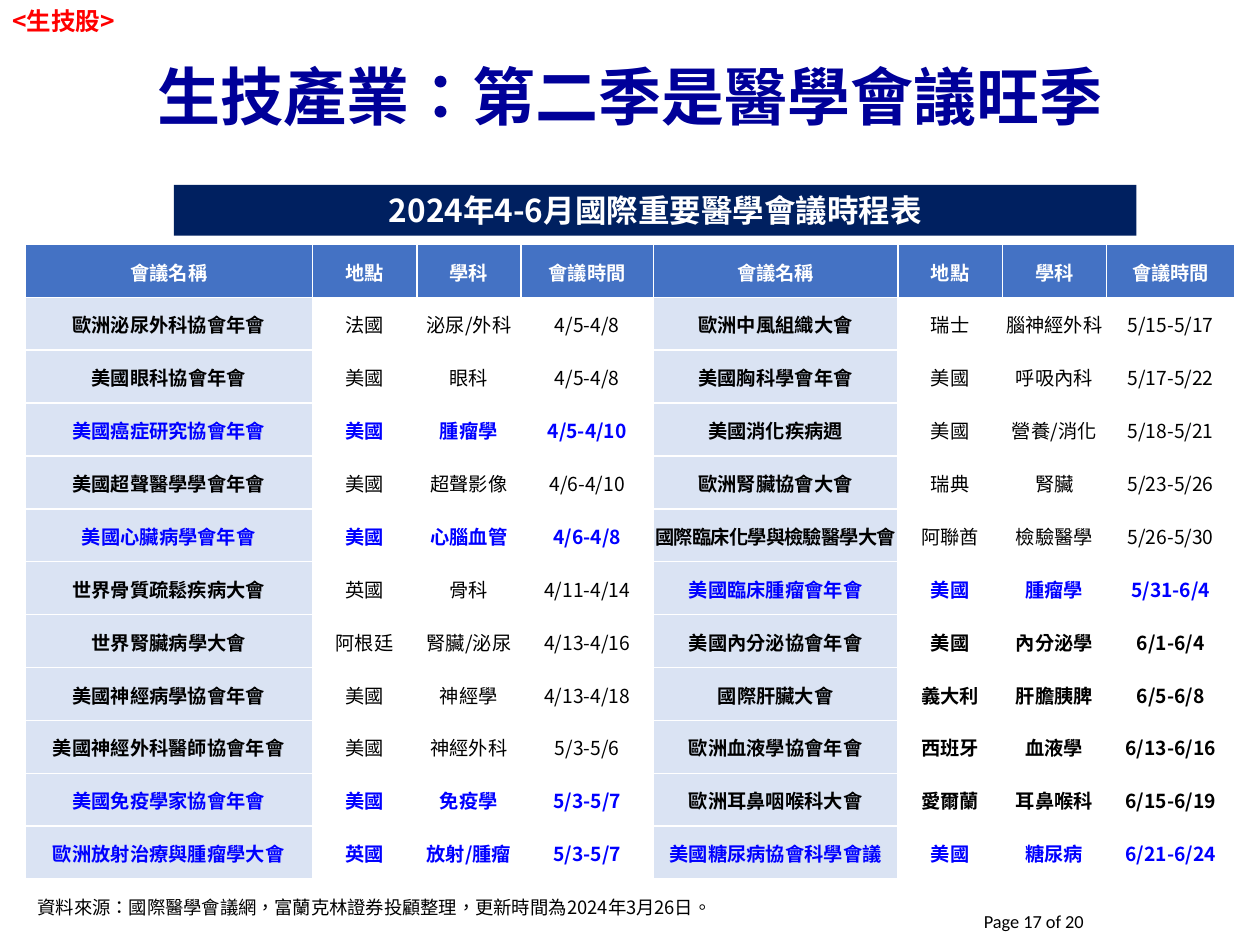
import pptx
import pptx.util
import pptx.dml.color
import pptx.enum.shapes
import pptx.enum.text
import pptx.oxml
import pptx.oxml.ns
from pptx.util import Pt

CJK_FONT = "Noto Sans CJK SC"
ALIGN = pptx.enum.text.PP_ALIGN
ANCHOR = pptx.enum.text.MSO_ANCHOR


def color(hex_string):
    return pptx.dml.color.RGBColor.from_string(hex_string)


def write(frame, text, size, hex_string, bold=False, align=ALIGN.LEFT, face=CJK_FONT):
    frame.text = text
    paragraph = frame.paragraphs[0]
    paragraph.alignment = align
    font = paragraph.runs[0].font
    font.size = Pt(size)
    font.bold = bold
    font.color.rgb = color(hex_string)
    font.name = face
    properties = paragraph.runs[0]._r.get_or_add_rPr()
    properties.set("lang", "zh-TW")
    east_asian = pptx.oxml.parse_xml(
        f'<a:ea {pptx.oxml.ns.nsdecls("a")} typeface="{face}"/>')
    properties.find(pptx.oxml.ns.qn("a:latin")).addnext(east_asian)
    return properties


deck = pptx.Presentation()
deck.slide_width = Pt(720)
deck.slide_height = Pt(540)
slide = deck.slides.add_slide(deck.slide_layouts[5])

title = slide.shapes.title
title.left, title.top, title.width, title.height = Pt(0), Pt(21.6), Pt(720), Pt(71.3)
title.text_frame.vertical_anchor = ANCHOR.MIDDLE
write(title.text_frame, "生技產業：第二季是醫學會議旺季", 36, "000099", True, ALIGN.CENTER)
title.text_frame.paragraphs[0].line_spacing = 0.9

banner = slide.shapes.add_shape(pptx.enum.shapes.MSO_SHAPE.RECTANGLE,
                                Pt(99.4), Pt(105.6), Pt(550), Pt(29.1))
banner.shadow.inherit = False
banner.fill.solid()
banner.fill.fore_color.rgb = color("002060")
banner.line.fill.background()
banner.text_frame.word_wrap = True
banner.text_frame.vertical_anchor = ANCHOR.TOP
write(banner.text_frame, "2024年4-6月國際重要醫學會議時程表", 18, "FFFFFF", True, ALIGN.CENTER)

headings = ["會議名稱", "地點", "學科", "會議時間"]
early_meetings = [
    ("歐洲泌尿外科協會年會", "法國", "泌尿/外科", "4/5-4/8", "plain"),
    ("美國眼科協會年會", "美國", "眼科", "4/5-4/8", "plain"),
    ("美國癌症研究協會年會", "美國", "腫瘤學", "4/5-4/10", "key"),
    ("美國超聲醫學學會年會", "美國", "超聲影像", "4/6-4/10", "plain"),
    ("美國心臟病學會年會", "美國", "心腦血管", "4/6-4/8", "key"),
    ("世界骨質疏鬆疾病大會", "英國", "骨科", "4/11-4/14", "plain"),
    ("世界腎臟病學大會", "阿根廷", "腎臟/泌尿", "4/13-4/16", "plain"),
    ("美國神經病學協會年會", "美國", "神經學", "4/13-4/18", "plain"),
    ("美國神經外科醫師協會年會", "美國", "神經外科", "5/3-5/6", "plain"),
    ("美國免疫學家協會年會", "美國", "免疫學", "5/3-5/7", "key"),
    ("歐洲放射治療與腫瘤學大會", "英國", "放射/腫瘤", "5/3-5/7", "key"),
]
late_meetings = [
    ("歐洲中風組織大會", "瑞士", "腦神經外科", "5/15-5/17", "plain"),
    ("美國胸科學會年會", "美國", "呼吸內科", "5/17-5/22", "plain"),
    ("美國消化疾病週", "美國", "營養/消化", "5/18-5/21", "plain"),
    ("歐洲腎臟協會大會", "瑞典", "腎臟", "5/23-5/26", "plain"),
    ("國際臨床化學與檢驗醫學大會", "阿聯酋", "檢驗醫學", "5/26-5/30", "plain"),
    ("美國臨床腫瘤會年會", "美國", "腫瘤學", "5/31-6/4", "key"),
    ("美國內分泌協會年會", "美國", "內分泌學", "6/1-6/4", "bold"),
    ("國際肝臟大會", "義大利", "肝膽胰脾", "6/5-6/8", "bold"),
    ("歐洲血液學協會年會", "西班牙", "血液學", "6/13-6/16", "bold"),
    ("歐洲耳鼻咽喉科大會", "愛爾蘭", "耳鼻喉科", "6/15-6/19", "bold"),
    ("美國糖尿病協會科學會議", "美國", "糖尿病", "6/21-6/24", "key"),
]
column_widths = [164.2, 59.6, 59.6, 75.7, 139.7, 59.6, 59.6, 73.4]
row_height = 30.24
row_count = len(early_meetings) + 1

schedule = slide.shapes.add_table(row_count, len(column_widths), Pt(14.4), Pt(139.7),
                                  Pt(sum(column_widths)), Pt(row_height * row_count)).table
for column, width in zip(schedule.columns, column_widths):
    column.width = Pt(width)
for row in schedule.rows:
    row.height = Pt(row_height)

for half, meetings in enumerate([early_meetings, late_meetings]):
    for row_index, (*details, emphasis) in enumerate([(*headings, "head")] + meetings):
        for detail_index, detail in enumerate(details):
            cell = schedule.cell(row_index, half * len(headings) + detail_index)
            is_name = detail_index == 0
            cell.margin_left = cell.margin_right = cell.margin_top = Pt(0.7)
            cell.margin_bottom = Pt(0)
            cell.vertical_anchor = ANCHOR.MIDDLE
            for side in ["lnL", "lnR", "lnT", "lnB"]:
                cell._tc.get_or_add_tcPr().append(pptx.oxml.parse_xml(
                    f'<a:{side} {pptx.oxml.ns.nsdecls("a")} w="12700"><a:solidFill>'
                    f'<a:srgbClr val="FFFFFF"/></a:solidFill></a:{side}>'))
            cell.fill.solid()
            body_fill = "DAE3F3" if is_name else "FFFFFF"
            cell.fill.fore_color.rgb = color("4472C4" if emphasis == "head" else body_fill)
            ink = {"head": "FFFFFF", "key": "0000FF"}.get(emphasis, "000000")
            properties = write(cell.text_frame, detail, 11, ink,
                               is_name or emphasis != "plain", ALIGN.CENTER)
            if detail == "國際臨床化學與檢驗醫學大會":
                properties.set("spc", "-50")

captions = [
    ("資料來源：國際醫學會議網，富蘭克林證券投顧整理，更新時間為2024年3月26日。",
     (14.4, 508.3, 527, 20.2), 10.5, "000000", False, ALIGN.LEFT, CJK_FONT, True, ANCHOR.TOP),
    ("<生技股>",
     (0, 0, 81.4, 24.5), 14, "FF0000", True, ALIGN.LEFT, CJK_FONT, False, ANCHOR.TOP),
    ("Page 17 of 20",
     (464.4, 511.9, 162, 28.8), 10.5, "000000", False, ALIGN.RIGHT, "Calibri", True, ANCHOR.MIDDLE),
]
for text, place, size, ink, bold, align, face, wrap, anchor in captions:
    caption = slide.shapes.add_textbox(*[Pt(length) for length in place]).text_frame
    caption.word_wrap = wrap
    caption.vertical_anchor = anchor
    write(caption, text, size, ink, bold, align, face)

deck.save("out.pptx")
